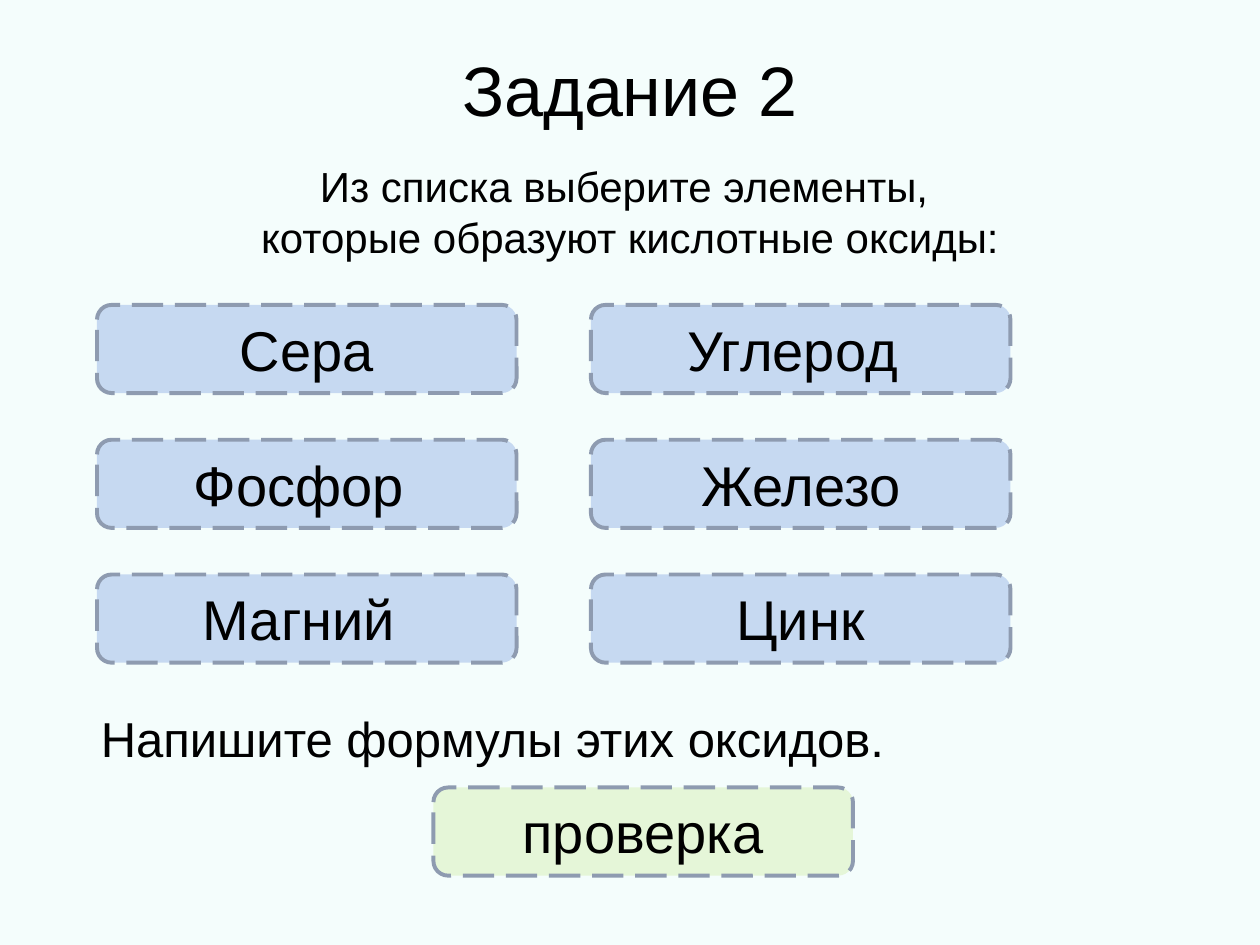
from lxml import etree
from pptx import Presentation
from pptx import util as u
from pptx.dml.color import RGBColor
from pptx.enum import dml, shapes, text
from pptx.oxml.ns import qn

ELEMENTS = [
    ["Сера", "Углерод "],
    ["Фосфор ", "Железо"],
    ["Магний ", "Цинк"],
]
GRID_LEFT, GRID_TOP = 0.77, 2.42
COLUMN_STEP, ROW_STEP = 3.92, 1.07
CARD_WIDTH, CARD_HEIGHT = 3.33, 0.7


def color(hex_value):
    return RGBColor.from_string(hex_value)


def write(shape, lines, size, align=text.PP_ALIGN.CENTER, wrap=False):
    frame = shape.text_frame
    frame.text = "\n".join(lines)
    frame.auto_size = text.MSO_AUTO_SIZE.NONE
    frame.word_wrap = wrap
    frame.vertical_anchor = text.MSO_ANCHOR.MIDDLE
    for paragraph in frame.paragraphs:
        paragraph.alignment = align
        paragraph.space_before = u.Pt(0)
        paragraph.font.name = "Arial"
        paragraph.font.size = u.Pt(size)
        paragraph.font.color.rgb = color("000000")


def place(placeholder, left, top, width, height):
    placeholder.left, placeholder.top = u.Inches(left), u.Inches(top)
    placeholder.width, placeholder.height = u.Inches(width), u.Inches(height)


def remove_bullet(paragraph):
    properties = paragraph._p.get_or_add_pPr()
    properties.set("marL", "0")
    properties.set("indent", "0")
    etree.SubElement(properties, qn("a:buNone"))


def add_rounded(slide, left, top, width, height):
    box = slide.shapes.add_shape(
        shapes.MSO_SHAPE.ROUNDED_RECTANGLE,
        u.Inches(left), u.Inches(top), u.Inches(width), u.Inches(height))
    box.shadow.inherit = False
    return box


def add_card(slide, left, top, label, fill):
    card = add_rounded(slide, left, top, CARD_WIDTH, CARD_HEIGHT)
    card.fill.solid()
    card.fill.fore_color.rgb = color(fill)
    card.line.color.rgb = color("8E9BB0")
    card.line.width = u.Pt(2.25)
    card.line.dash_style = dml.MSO_LINE.LONG_DASH
    write(card, [label], 32)


def add_question(slide):
    question = add_rounded(slide, 0.39, 1.09, 9.22, 1.17)
    question.adjustments[0] = 0.12
    question.fill.background()
    question.line.fill.background()
    write(question, ["Из списка выберите элементы, ",
                     "которые образуют кислотные оксиды:"], 24)


def main():
    deck = Presentation()
    deck.slide_width, deck.slide_height = u.Inches(10), u.Inches(7.5)
    slide = deck.slides.add_slide(deck.slide_layouts[1])
    slide.background.fill.solid()
    slide.background.fill.fore_color.rgb = color("F4FDFC")

    title, instruction = slide.placeholders
    place(title, 0.5, 0.23, 9, 0.94)
    write(title, ["Задание 2"], 40, wrap=True)
    place(instruction, 0.7, 5.39, 8.61, 0.94)
    write(instruction, ["Напишите формулы этих оксидов."], 28,
          text.PP_ALIGN.LEFT, wrap=True)
    remove_bullet(instruction.text_frame.paragraphs[0])

    add_question(slide)
    for row, labels in enumerate(ELEMENTS):
        for column, label in enumerate(labels):
            add_card(slide, GRID_LEFT + column * COLUMN_STEP,
                     GRID_TOP + row * ROW_STEP, label, "C6D9F1")
    add_card(slide, 3.44, 6.25, "проверка", "E5F6D8")

    deck.save("out.pptx")


if __name__ == "__main__":
    main()
